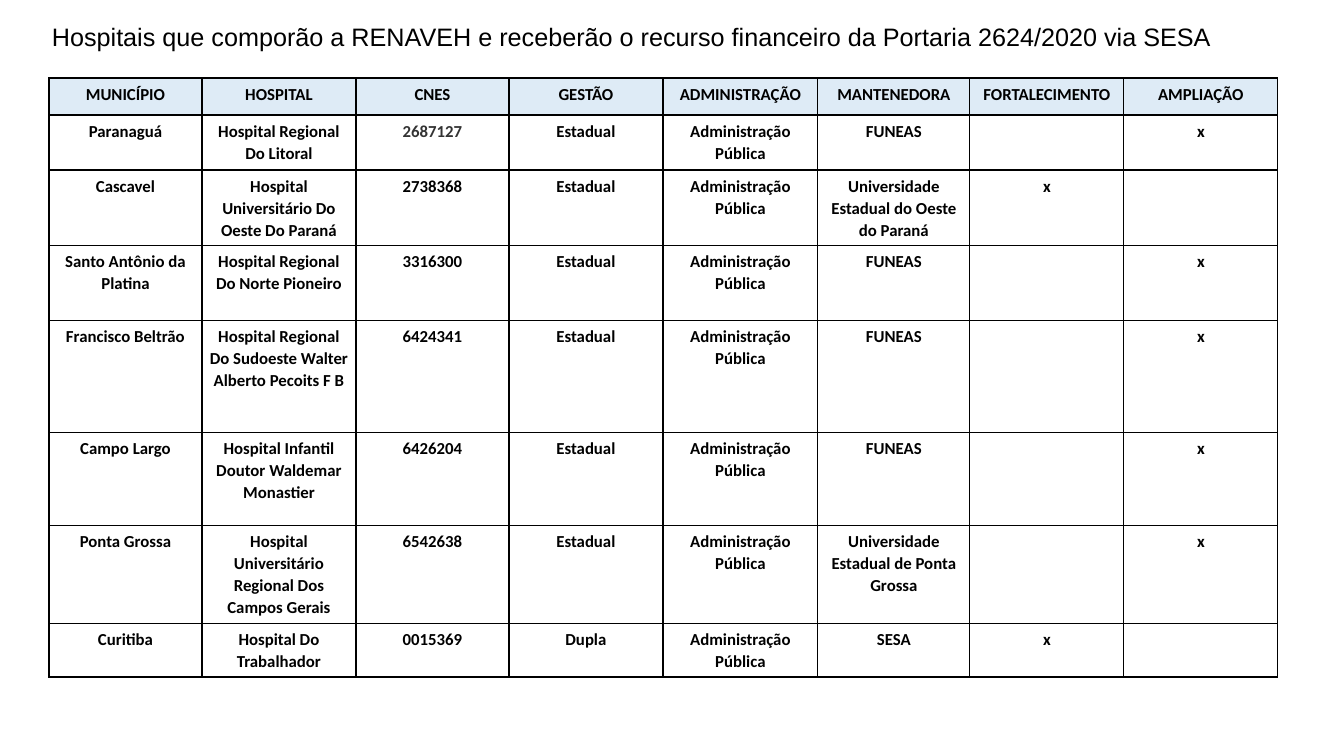
from lxml import etree
from pptx import Presentation
from pptx import util as u
from pptx.dml.color import RGBColor
from pptx.enum import text
from pptx.oxml import ns


def px(length):
    return u.Emu(round(length * 914400 / 100.8))


def add_run(paragraph, words, font_name, size, color, bold=False):
    run = paragraph.add_run()
    run.text = words
    run.font.name = font_name
    run.font.size = u.Pt(size)
    run.font.bold = bold
    run.font.color.rgb = RGBColor.from_string(color)


presentation = Presentation()
presentation.slide_width = px(1344)
presentation.slide_height = px(756)
slide = presentation.slides.add_slide(presentation.slide_layouts[6])

# Hospital table content
PUBLIC = "Administração Pública"
rows = [
    ["MUNICÍPIO", "HOSPITAL", "CNES", "GESTÃO", "ADMINISTRAÇÃO",
     "MANTENEDORA", "FORTALECIMENTO", "AMPLIAÇÃO"],
    ["Paranaguá", "Hospital Regional Do Litoral", "2687127", "Estadual",
     PUBLIC, "FUNEAS", "", "x"],
    ["Cascavel", "Hospital Universitário Do Oeste Do Paraná", "2738368", "Estadual",
     PUBLIC, "Universidade Estadual do Oeste do Paraná", "x", ""],
    ["Santo Antônio da Platina", "Hospital Regional Do Norte Pioneiro", "3316300", "Estadual",
     PUBLIC, "FUNEAS", "", "x"],
    ["Francisco Beltrão", "Hospital Regional Do Sudoeste Walter Alberto Pecoits F B",
     "6424341", "Estadual", PUBLIC, "FUNEAS", "", "x"],
    ["Campo Largo", "Hospital Infantil Doutor Waldemar Monastier", "6426204", "Estadual",
     PUBLIC, "FUNEAS", "", "x"],
    ["Ponta Grossa", "Hospital Universitário Regional Dos Campos Gerais", "6542638",
     "Estadual", PUBLIC, "Universidade Estadual de Ponta Grossa", "", "x"],
    ["Curitiba", "Hospital Do Trabalhador", "0015369", "Dupla",
     PUBLIC, "SESA", "x", ""],
]
column_widths = [153, 154, 153, 154, 155, 152, 154, 154]
row_heights = [37, 55, 75, 75, 112, 93, 93, 37]

# Table grid
frame = slide.shapes.add_table(len(rows), len(column_widths), px(49), px(78),
                               px(sum(column_widths)), px(sum(row_heights)))
table = frame.table
table.first_row = False
table.horz_banding = False
for column, width in zip(table.columns, column_widths):
    column.width = px(width)
for row, height in zip(table.rows, row_heights):
    row.height = px(height)

# Cells: borders, fill and text
for row_index, row in enumerate(rows):
    for column_index, words in enumerate(row):
        cell = table.cell(row_index, column_index)
        cell.margin_left = cell.margin_right = px(7)
        cell.margin_top = cell.margin_bottom = px(5)

        properties = cell._tc.get_or_add_tcPr()
        for side in ("a:lnL", "a:lnR", "a:lnT", "a:lnB"):
            line = etree.SubElement(properties, ns.qn(side), w=str(u.Pt(0.96)))
            line_fill = etree.SubElement(line, ns.qn("a:solidFill"))
            etree.SubElement(line_fill, ns.qn("a:srgbClr"), val="000000")

        if row_index == 0:
            cell.fill.solid()
            cell.fill.fore_color.rgb = RGBColor.from_string("DEEBF6")
        else:
            cell.fill.background()

        if words:
            paragraph = cell.text_frame.paragraphs[0]
            paragraph.alignment = text.PP_ALIGN.CENTER
            paragraph.line_spacing = 1.07
            color = "333333" if words == "2687127" else "000000"
            add_run(paragraph, words, "Calibri", 12, color, bold=True)

# Title
title = slide.shapes.add_textbox(px(42), px(16), px(1248), px(40))
title.text_frame.word_wrap = True
title.text_frame.auto_size = text.MSO_AUTO_SIZE.SHAPE_TO_FIT_TEXT
add_run(title.text_frame.paragraphs[0],
        "Hospitais que comporão a RENAVEH e receberão o recurso financeiro "
        "da Portaria 2624/2020 via SESA", "Arial", 18, "000000")

presentation.save("out.pptx")
